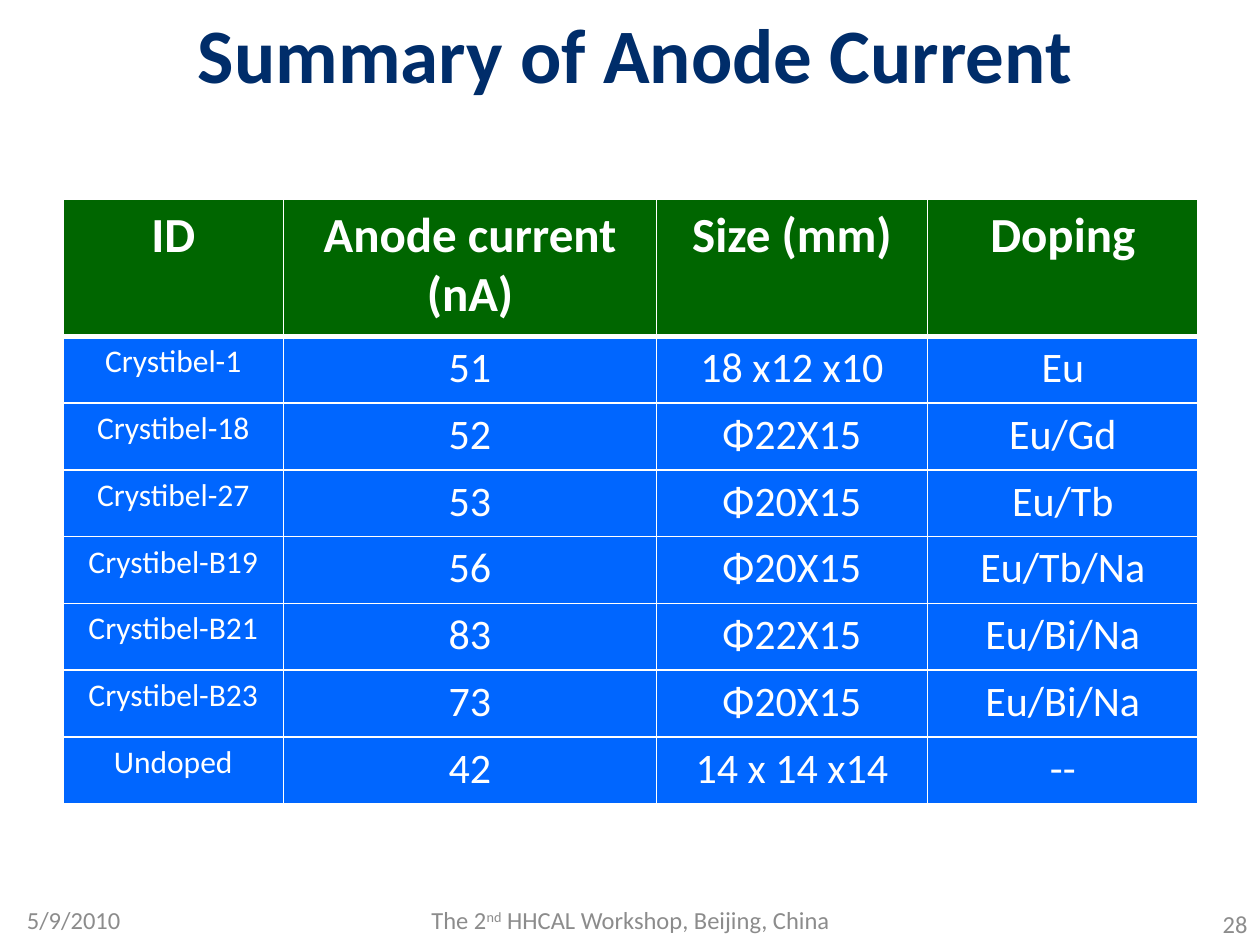
from pptx import Presentation
from pptx.dml.color import RGBColor
from pptx.enum.text import MSO_ANCHOR, PP_ALIGN
from pptx.oxml import parse_xml
from pptx.oxml.ns import nsdecls
from pptx.util import Inches, Pt

CENTER, RIGHT = PP_ALIGN.CENTER, PP_ALIGN.RIGHT
MIDDLE = MSO_ANCHOR.MIDDLE

COLORS = {
    "title": "002D6A",
    "footer": "8C8C8C",
    "header": "006600",
    "body": "0066FF",
    "white": "FFFFFF",
}
COLUMN_WIDTHS = [1.75, 2.96, 2.15, 2.15]
HEADER_HEIGHT, ROW_HEIGHT = 1.09, 0.53
ROWS = [
    ["ID", "Anode current (nA)", "Size (mm)", "Doping"],
    ["Crystibel-1", "51", "18 x12 x10", "Eu"],
    ["Crystibel-18", "52", "Φ22X15", "Eu/Gd"],
    ["Crystibel-27", "53", "Φ20X15", "Eu/Tb"],
    ["Crystibel-B19", "56", "Φ20X15", "Eu/Tb/Na"],
    ["Crystibel-B21", "83", "Φ22X15", "Eu/Bi/Na"],
    ["Crystibel-B23", "73", "Φ20X15", "Eu/Bi/Na"],
    ["Undoped", "42", "14 x 14 x14", "--"],
]


class SlideBuilder:
    """Holds the style and the slide, and adds each kind of element."""

    font_name = "Calibri"

    def __init__(self, slide):
        self.slide = slide

    def style(self, paragraph, size, color, bold=False, align=CENTER):
        paragraph.alignment = align
        font = paragraph.font
        font.name = self.font_name
        font.size = Pt(size)
        font.bold = bold
        font.color.rgb = RGBColor.from_string(COLORS[color])

    def text(self, left, top, width, height, runs, size, color, bold=False, align=CENTER):
        shape = self.slide.shapes.add_textbox(
            Inches(left), Inches(top), Inches(width), Inches(height))
        frame = shape.text_frame
        frame.word_wrap = True
        frame.vertical_anchor = MIDDLE
        paragraph = frame.paragraphs[0]
        for content, baseline in runs:
            run = paragraph.add_run()
            run.text = content
            if baseline:
                run.font._element.set("baseline", str(baseline * 1000))
        self.style(paragraph, size, color, bold, align)

    def borders(self, cell, bottom_width):
        properties = cell._tc.get_or_add_tcPr()
        for side, width in (("L", 1), ("R", 1), ("T", 1), ("B", bottom_width)):
            properties.append(parse_xml(
                f'<a:ln{side} {nsdecls("a")} w="{Pt(width)}"><a:solidFill>'
                f'<a:srgbClr val="{COLORS["white"]}"/></a:solidFill></a:ln{side}>'))

    def cell(self, cell, content, size, fill, bold, bottom_width):
        cell.text = content
        self.style(cell.text_frame.paragraphs[0], size, "white", bold)
        self.borders(cell, bottom_width)
        cell.fill.solid()
        cell.fill.fore_color.rgb = RGBColor.from_string(COLORS[fill])

    def table(self, left, top, rows, widths):
        heights = [HEADER_HEIGHT] + [ROW_HEIGHT] * (len(rows) - 1)
        table = self.slide.shapes.add_table(
            len(rows), len(widths), Inches(left), Inches(top),
            Inches(sum(widths)), Inches(sum(heights))).table
        for column, width in zip(table.columns, widths):
            column.width = Inches(width)
        for row, height in zip(table.rows, heights):
            row.height = Inches(height)
        for row_index, values in enumerate(rows):
            for column_index, value in enumerate(values):
                cell = table.cell(row_index, column_index)
                if row_index == 0:
                    self.cell(cell, value, 28, "header", True, 3)
                else:
                    size = 18 if column_index == 0 else 24
                    self.cell(cell, value, size, "body", False, 1)
        for cell in table.rows[1].cells:
            cell._tc.tcPr.find("{*}lnT").set("w", str(Pt(3)))


def main():
    presentation = Presentation()
    presentation.slide_width = Inches(10)
    presentation.slide_height = Inches(7.5)
    builder = SlideBuilder(presentation.slides.add_slide(presentation.slide_layouts[6]))

    builder.text(7.92, 7.17, 2.08, 0.33, [("28", 0)], 14, "footer", align=RIGHT)
    workshop = [("The 2", 0), ("nd", 30), (" HHCAL Workshop, Beijing, China", 0)]
    builder.text(2.67, 7.1, 4.67, 0.4, workshop, 14, "footer")
    builder.text(0, 7.1, 1.17, 0.4, [("5/9/2010", 0)], 14, "footer")
    builder.text(0.92, 0, 8.25, 0.83, [("Summary of Anode Current", 0)], 44, "title", bold=True)
    builder.table(0.5, 1.58, ROWS, COLUMN_WIDTHS)

    presentation.save("out.pptx")


if __name__ == "__main__":
    main()
